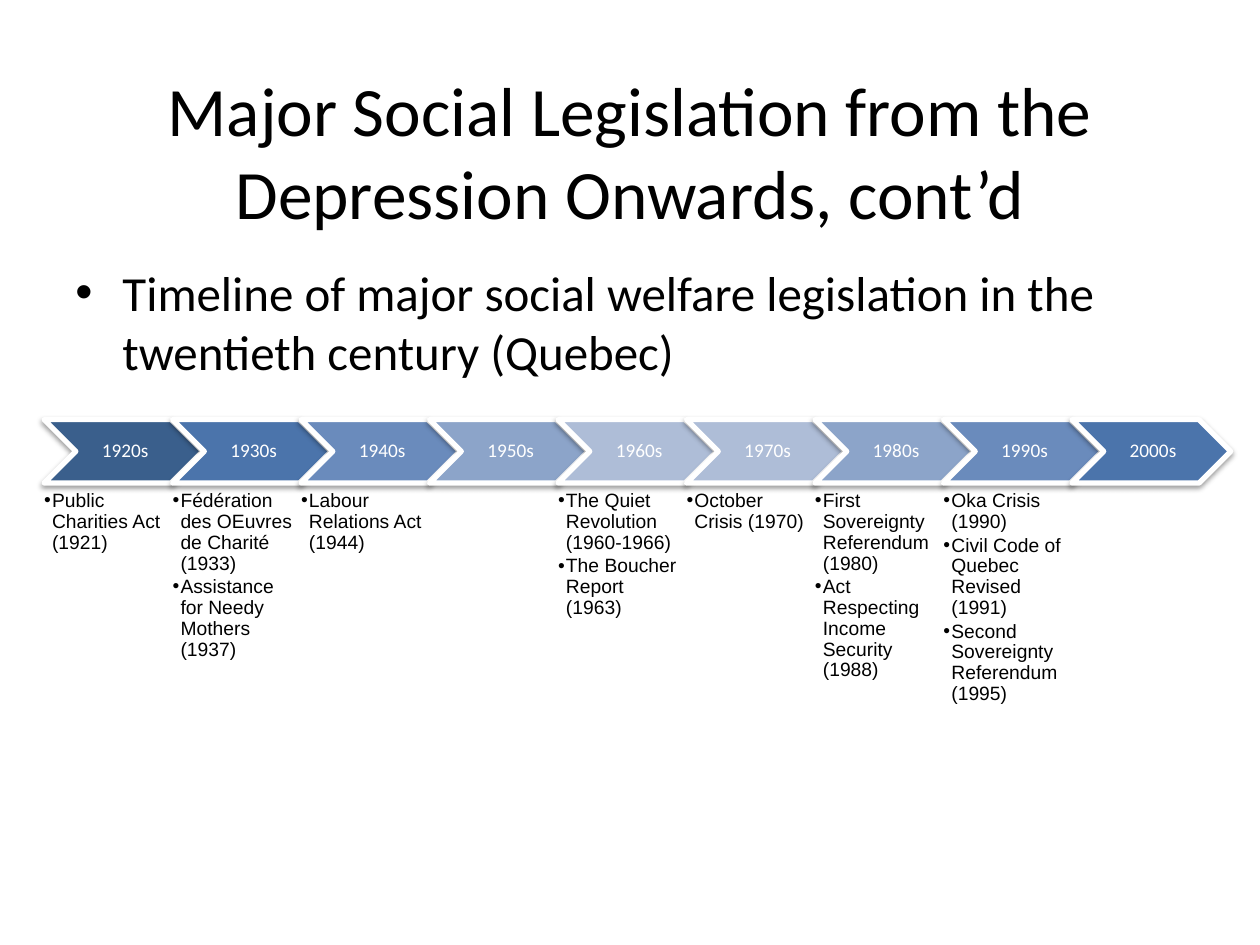
import pptx
import pptx.util
import pptx.dml.color
import pptx.enum.shapes
import pptx.enum.text
import pptx.oxml
import pptx.oxml.ns
from pptx.util import Cm

ALIGN = pptx.enum.text.PP_ALIGN
ANCHOR = pptx.enum.text.MSO_ANCHOR
NAMESPACE = pptx.oxml.ns.nsdecls("a")


def color(code):
    return pptx.dml.color.RGBColor.from_string(code)


class Timeline:
    """Holds the style, the current slide and the group of timeline shapes."""
    heading_font = "Calibri"
    detail_font = "Arial"
    ink = "000000"
    paper = "FFFFFF"

    def __init__(self, page):
        self.page = page
        self.group = None

    def start_group(self):
        self.group = self.page.shapes.add_group_shape()

    def text(self, place, lines, size, font, code=ink, align=ALIGN.LEFT,
             anchor=ANCHOR.TOP, insets=(0.25, 0.13, 0.25, 0.13),
             spacing=1.0, after=0, indent=0):
        shapes = (self.group or self.page).shapes
        box = shapes.add_textbox(*map(Cm, place))
        frame = box.text_frame
        frame.word_wrap = True
        frame.vertical_anchor = anchor
        (frame.margin_left, frame.margin_top,
         frame.margin_right, frame.margin_bottom) = map(Cm, insets)
        for number, line in enumerate(lines):
            para = frame.add_paragraph() if number else frame.paragraphs[0]
            if indent:
                self.bullet(para, indent)
            para.alignment = align
            para.line_spacing = spacing
            para.space_after = pptx.util.Pt(after)
            span = para.add_run()
            span.text = line
            span.font.size = pptx.util.Pt(size)
            span.font.name = font
            span.font.color.rgb = color(code)

    def bullet(self, para, indent):
        properties = para._p.get_or_add_pPr()
        properties.set("marL", str(Cm(indent)))
        properties.set("indent", str(-Cm(indent)))
        for tag in ('buFont typeface="Arial"', 'buChar char="•"'):
            properties.append(pptx.oxml.parse_xml(f"<a:{tag} {NAMESPACE}/>"))

    def chevron(self, place, fill):
        kind = pptx.enum.shapes.MSO_SHAPE.CHEVRON
        shape = self.group.shapes.add_shape(kind, *map(Cm, place))
        shape.fill.solid()
        shape.fill.fore_color.rgb = color(fill)
        shape.line.color.rgb = color(self.paper)
        shape.line.width = pptx.util.Pt(3)
        # Soft shadow straight below
        shape.shadow.inherit = False
        effects = shape._element.spPr.find(pptx.oxml.ns.qn("a:effectLst"))
        effects.append(pptx.oxml.parse_xml(
            f'<a:outerShdw {NAMESPACE} blurRad="40000" dist="20000" '
            'dir="5400000" rotWithShape="0"><a:srgbClr val="000000">'
            '<a:alpha val="38000"/></a:srgbClr></a:outerShdw>'))

    def decade(self, left, label, fill, events):
        top, height = 8.46, 1.28
        self.chevron((left, top, 3.2, height), fill)
        self.text((left + 0.64, top, 1.91, height), [label], 11,
                  self.heading_font, self.paper, ALIGN.CENTER, ANCHOR.MIDDLE,
                  (0.12, 0.04, 0.04, 0.04), 0.9)
        if events:
            self.text((left, 9.9, 2.55, 4.22), events, 11, self.detail_font,
                      insets=(0, 0, 0, 0), spacing=0.9, after=1.65,
                      indent=0.16)


DECADES = [
    ("1920s", "3A5F8C", ["Public Charities Act (1921)"]),
    ("1930s", "4B74AB", ["Fédération des OEuvres de Charité (1933)",
                         "Assistance for Needy Mothers (1937)"]),
    ("1940s", "6A8BBC", ["Labour Relations Act (1944)"]),
    ("1950s", "8CA4C9", []),
    ("1960s", "AEBDD7", ["The Quiet Revolution (1960-1966)",
                         "The Boucher Report (1963)"]),
    ("1970s", "AEBDD7", ["October Crisis (1970)"]),
    ("1980s", "8CA4C9", ["First Sovereignty Referendum (1980)",
                         "Act Respecting Income Security (1988)"]),
    ("1990s", "6A8BBC", ["Oka Crisis (1990)",
                         "Civil Code of Quebec Revised (1991)",
                         "Second Sovereignty Referendum (1995)"]),
    ("2000s", "4B74AB", []),
]


def main():
    deck = pptx.Presentation()
    deck.slide_width, deck.slide_height = Cm(25.4), Cm(19.05)
    timeline = Timeline(deck.slides.add_slide(deck.slide_layouts[6]))

    # Title and introduction
    timeline.text((1.27, 1.73, 22.86, 2.59),
                  ["Major Social Legislation from the Depression Onwards, cont’d"],
                  39.6, timeline.heading_font, align=ALIGN.CENTER,
                  anchor=ANCHOR.MIDDLE)
    timeline.text((1.27, 5.16, 22.86, 13.41),
                  ["Timeline of major social welfare legislation in the "
                   "twentieth century (Quebec)"],
                  28, timeline.heading_font, indent=0.95)

    # Decades at an equal pitch
    timeline.start_group()
    for number, (label, fill, events) in enumerate(DECADES):
        timeline.decade(0.89 + 2.59 * number, label, fill, events)

    deck.save("out.pptx")


if __name__ == "__main__":
    main()
